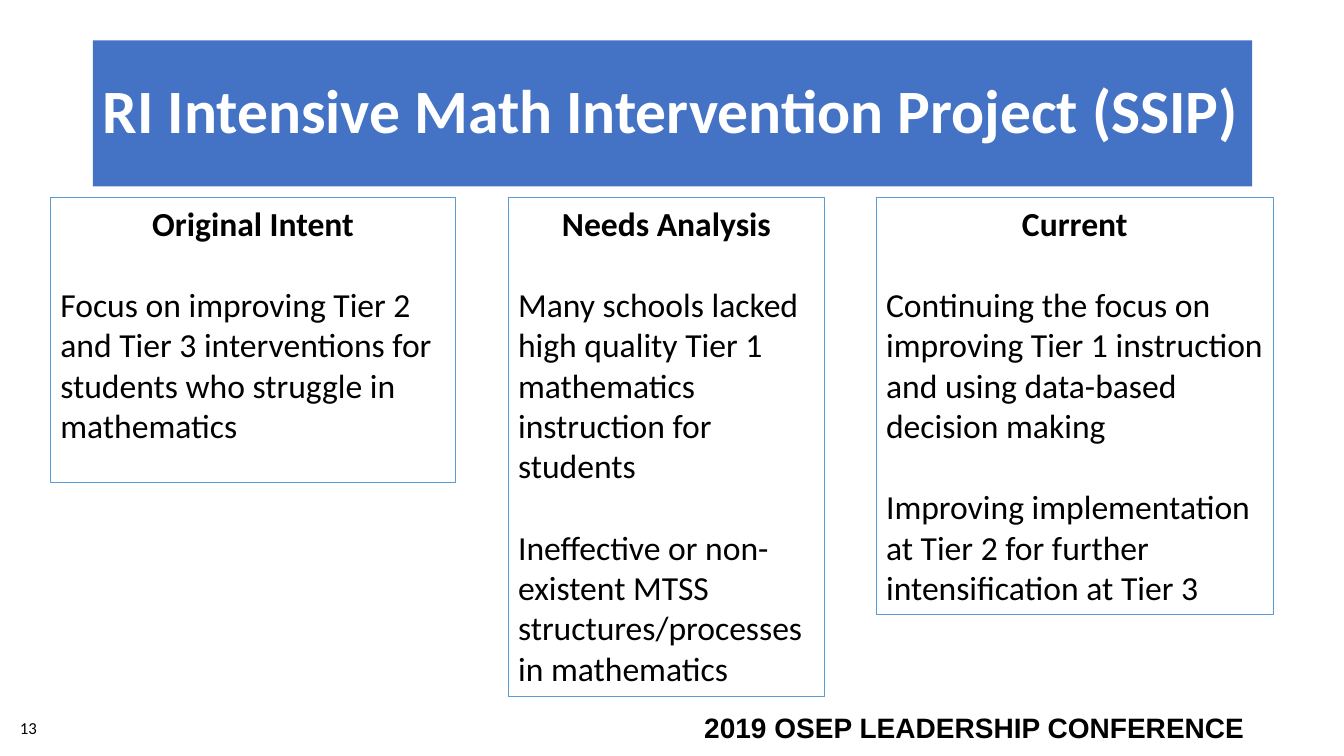
from pptx import Presentation
from pptx.dml.color import RGBColor
from pptx.enum.text import MSO_ANCHOR, MSO_AUTO_SIZE, PP_ALIGN
from pptx.util import Inches, Pt

TOP = 1.96
LINE = 29.3  # height of one 24 pt line, in points

COLUMNS = [
    (0.5, 4.02, 2.83, "Original Intent", [
        "Focus on improving Tier 2 and Tier 3 interventions for students "
        "who struggle in mathematics"]),
    (5.04, 3.14, 4.95, "Needs Analysis", [
        "Many schools lacked high quality Tier 1 mathematics instruction "
        "for students",
        "Ineffective or non-existent MTSS structures/processes in mathematics"]),
    (8.69, 3.94, 4.14, "Current", [
        "Continuing the focus on improving Tier 1 instruction and using "
        "data-based decision making",
        "Improving implementation at Tier 2 for further intensification "
        "at Tier 3"]),
]


def color(code):
    return RGBColor.from_string(code)


def place(shape, left, top, width, height):
    shape.left, shape.top = Inches(left), Inches(top)
    shape.width, shape.height = Inches(width), Inches(height)


def style(para, size, bold=False, align=PP_ALIGN.LEFT, face="Calibri",
          ink="000000"):
    para.alignment = align
    for run in para.runs:
        font = run.font
        font.name, font.size, font.bold = face, Pt(size), bold
        font.color.rgb = color(ink)


def add_title(slide, text):
    title = slide.shapes.title
    place(title, 0.92, 0.4, 11.5, 1.45)
    title.fill.solid()
    title.fill.fore_color.rgb = color("4472C4")
    frame = title.text_frame
    frame.text = text
    frame.word_wrap = True
    frame.auto_size = MSO_AUTO_SIZE.NONE
    frame.vertical_anchor = MSO_ANCHOR.MIDDLE
    para = frame.paragraphs[0]
    para.line_spacing = 0.9
    style(para, 44, True, ink="FFFFFF")


def add_label(slide, box, text, size, anchor=MSO_ANCHOR.TOP, **look):
    frame = slide.shapes.add_textbox(*map(Inches, box)).text_frame
    frame.word_wrap = True
    frame.vertical_anchor = anchor
    frame.text = text
    style(frame.paragraphs[0], size, **look)


def add_column(slide, left, width, height, head, body):
    box = slide.shapes.add_textbox(
        Inches(left), Inches(TOP), Inches(width), Inches(height))
    box.line.color.rgb = color("5B9BD5")
    box.line.width = Pt(0.75)
    frame = box.text_frame
    frame.word_wrap = True
    frame.text = head
    style(frame.paragraphs[0], 24, True, PP_ALIGN.CENTER)
    for text in body:
        para = frame.add_paragraph()
        para.text = text
        para.space_before = Pt(LINE)
        style(para, 24)


def main():
    deck = Presentation()
    deck.slide_width, deck.slide_height = Inches(13.33), Inches(7.5)
    slide = deck.slides.add_slide(deck.slide_layouts.get_by_name("Title Only"))
    add_label(slide, (6.67, 7, 5.77, 0.44), "2019 OSEP LEADERSHIP CONFERENCE",
              20, bold=True, align=PP_ALIGN.RIGHT, face="Arial")
    add_title(slide, "RI Intensive Math Intervention Project (SSIP)")
    add_label(slide, (0.1, 7.02, 3, 0.4), "13", 12, MSO_ANCHOR.MIDDLE)
    for column in COLUMNS:
        add_column(slide, *column)
    deck.save("out.pptx")


if __name__ == "__main__":
    main()
